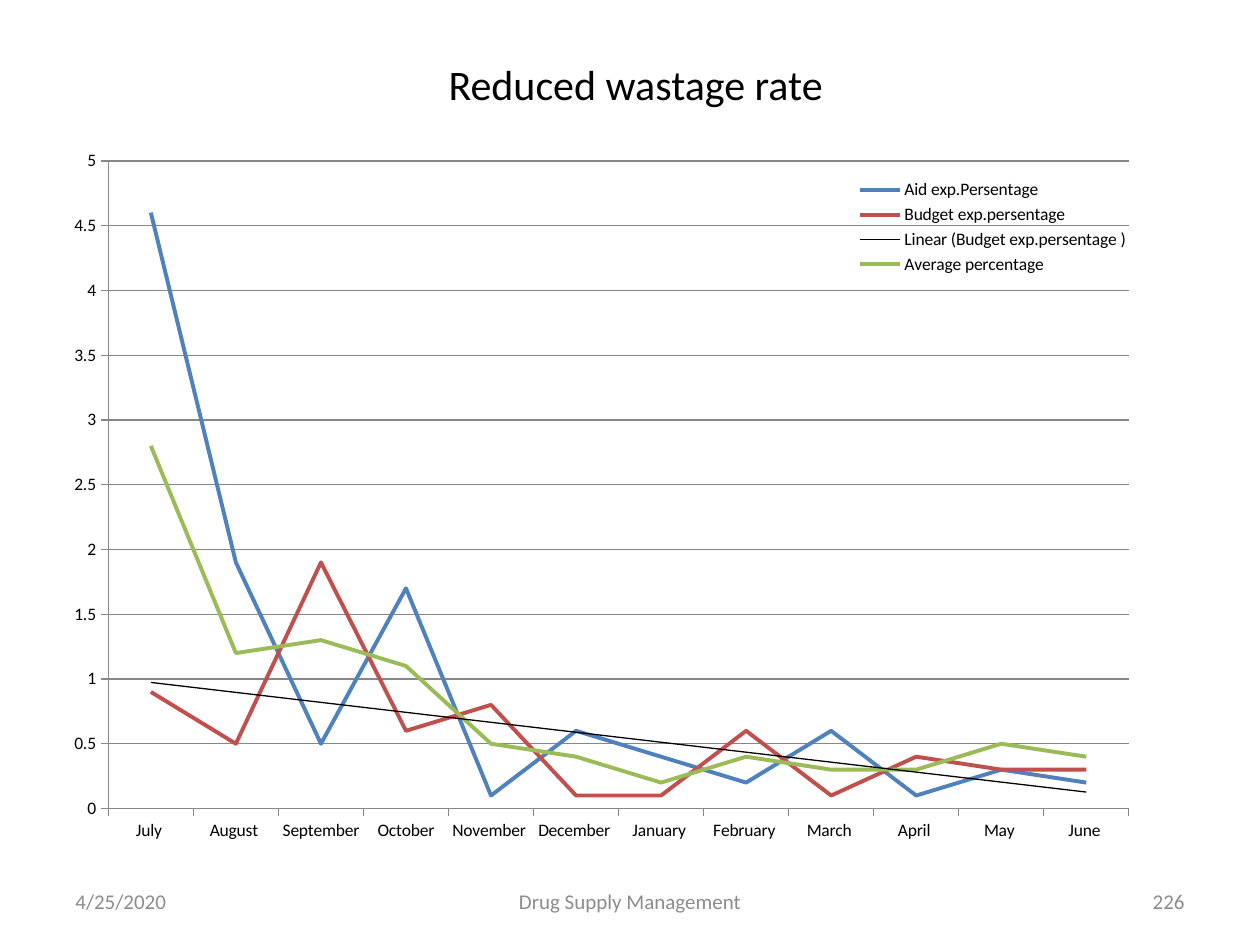
from dataclasses import dataclass

from lxml.etree import SubElement, Element
from pptx import Presentation
from pptx.chart.data import CategoryChartData
from pptx.dml.color import RGBColor
from pptx.enum.chart import XL_CHART_TYPE, XL_LEGEND_POSITION, XL_TICK_MARK
from pptx.enum.text import MSO_ANCHOR, PP_ALIGN
from pptx.oxml.ns import qn
from pptx.util import Pt


@dataclass(frozen=True)
class Theme:
    font: str = "Calibri"
    text: RGBColor = RGBColor(0, 0, 0)
    muted: RGBColor = RGBColor(0x8C, 0x8C, 0x8C)
    grid: RGBColor = RGBColor(0x87, 0x87, 0x87)
    lines: tuple = ("4F81BD", "C0504D", "9BBB59")
    title_size: int = 24
    footer_size: int = 12
    chart_size: int = 10
    series_width: float = 2.25
    hairline: float = 0.75


THEME = Theme()
MONTHS = ("July ", "August ", "September", "October", "November ", "December ",
          "January ", "February ", "March ", "April ", "May ", "June ")
WASTAGE = {
    "Aid exp.Persentage ": (4.6, 1.9, 0.5, 1.7, 0.1, 0.6, 0.4, 0.2, 0.6, 0.1, 0.3, 0.2),
    "Budget exp.persentage ": (0.9, 0.5, 1.9, 0.6, 0.8, 0.1, 0.1, 0.6, 0.1, 0.4, 0.3, 0.3),
    "Average percentage ": (2.8, 1.2, 1.3, 1.1, 0.5, 0.4, 0.2, 0.4, 0.3, 0.3, 0.5, 0.4),
}
TREND_SERIES = 1


def set_font(font, size, color):
    values = {"name": THEME.font, "size": Pt(size), "bold": False}
    for name, value in values.items():
        setattr(font, name, value)
    font.color.rgb = color


def write_text(sp, text, align, size, color):
    tf = sp.text_frame
    for name, value in {"word_wrap": True, "vertical_anchor": MSO_ANCHOR.MIDDLE}.items():
        setattr(tf, name, value)
    p = tf.paragraphs[0]
    p.alignment = align
    r = p.add_run()
    r.text = text
    set_font(r.font, size, color)


def add_title(s, left, top, width, height):
    sp = s.shapes.title
    box = {"left": left, "top": top, "width": width, "height": height}
    for name, value in box.items():
        setattr(sp, name, Pt(value))
    write_text(sp, "Reduced wastage rate ", PP_ALIGN.CENTER, THEME.title_size, THEME.text)


def set_layout(parent, index, fractions, inner=False):
    """Place a chart part by fractions of the chart: x, y, w, h."""
    for old in parent.findall(qn("c:layout")):
        parent.remove(old)
    layout = Element(qn("c:layout"))
    manual = SubElement(layout, qn("c:manualLayout"))
    settings = [("layoutTarget", "inner")] if inner else []
    settings += [("xMode", "edge"), ("yMode", "edge"), *zip("xywh", fractions)]
    for tag, value in settings:
        SubElement(manual, qn(f"c:{tag}")).set("val", str(value))
    parent.insert(index, layout)


def add_trendline(series):
    """Add a thin linear trend in the text colour."""
    trend = Element(qn("c:trendline"))
    sppr = SubElement(trend, qn("c:spPr"))
    ln = SubElement(sppr, qn("a:ln"), w=str(Pt(THEME.hairline)))
    fill = SubElement(ln, qn("a:solidFill"))
    SubElement(fill, qn("a:srgbClr"), val=str(THEME.text))
    for tag, value in (("trendlineType", "linear"), ("dispRSqr", "0"), ("dispEq", "0")):
        SubElement(trend, qn(f"c:{tag}")).set("val", value)
    series._element.find(qn("c:cat")).addprevious(trend)


def format_line(line, color, width):
    line.color.rgb = color
    line.width = Pt(width)


def add_wastage_chart(s, left, top, width, height):
    data = CategoryChartData()
    data.categories = MONTHS
    for name, values in WASTAGE.items():
        data.add_series(name, values)
    chart = s.shapes.add_chart(XL_CHART_TYPE.LINE, Pt(left), Pt(top),
                               Pt(width), Pt(height), data).chart
    chart.has_title = False
    set_font(chart.font, THEME.chart_size, THEME.text)

    # Series and trend
    for series, color in zip(chart.plots[0].series, THEME.lines):
        series.smooth = False
        format_line(series.format.line, RGBColor.from_string(color), THEME.series_width)
    add_trendline(chart.plots[0].series[TREND_SERIES])

    # Axes
    value_axis = chart.value_axis
    scale = {"minimum_scale": 0, "maximum_scale": 5, "major_unit": 0.5,
             "has_major_gridlines": True}
    for name, value in scale.items():
        setattr(value_axis, name, value)
    value_axis.tick_labels.number_format = "General"
    value_axis.tick_labels.number_format_is_linked = False
    for axis in (chart.category_axis, value_axis):
        axis.major_tick_mark = XL_TICK_MARK.OUTSIDE
        axis.minor_tick_mark = XL_TICK_MARK.NONE
        format_line(axis.format.line, THEME.grid, THEME.hairline)
    format_line(value_axis.major_gridlines.format.line, THEME.grid, THEME.hairline)

    # Legend over the upper right of the plot
    chart.has_legend = True
    chart.legend.position = XL_LEGEND_POSITION.RIGHT
    chart.legend.include_in_layout = True
    set_font(chart.legend.font, THEME.chart_size, THEME.text)
    set_layout(chart.legend._element, 1, (0.7, 0.04, 0.24, 0.15))
    plot_area = chart._chartSpace.chart.plotArea
    set_layout(plot_area, 0, (0.04, 0.02, 0.9, 0.93), inner=True)


def add_footer(s, left, top, width, height):
    side, middle = 168, 228
    parts = (
        ("4/25/2020", left, side, PP_ALIGN.LEFT),
        ("Drug Supply Management", left + (width - middle) / 2, middle, PP_ALIGN.CENTER),
        ("226", left + width - side, side, PP_ALIGN.RIGHT),
    )
    for text, x, w, align in parts:
        sp = s.shapes.add_textbox(Pt(x), Pt(top), Pt(w), Pt(height))
        write_text(sp, text, align, THEME.footer_size, THEME.muted)


def main():
    prs = Presentation()
    prs.slide_width, prs.slide_height = Pt(720), Pt(540)
    s = prs.slides.add_slide(prs.slide_layouts.get_by_name("Title Only"))
    add_title(s, 42, 24, 648, 48)
    add_wastage_chart(s, 36, 84, 648, 398)
    add_footer(s, 36, 500.5, 648, 28.8)
    prs.save("out.pptx")


if __name__ == "__main__":
    main()
